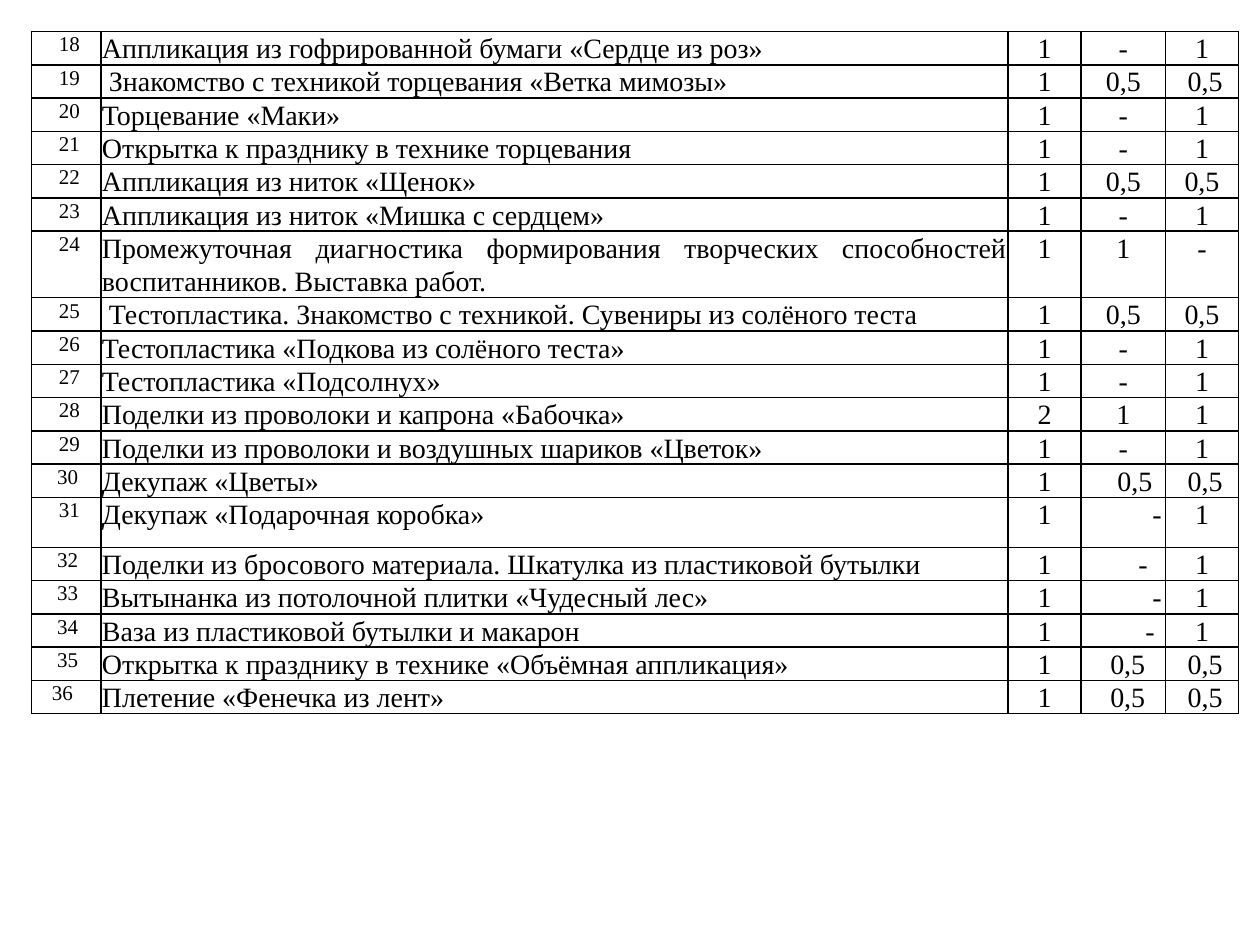
from dataclasses import dataclass

from lxml import etree
from pptx import Presentation
from pptx.dml.color import RGBColor
from pptx.enum.text import PP_ALIGN
from pptx.oxml.ns import qn
from pptx.util import Pt

LEFT, CENTER, JUSTIFY = PP_ALIGN.LEFT, PP_ALIGN.CENTER, PP_ALIGN.JUSTIFY


@dataclass(frozen=True)
class Theme:
    font: str = "Times New Roman"
    ink: str = "000000"
    number_size: float = 12
    text_size: float = 16
    line_spacing: float = 1.07
    border: float = 1
    inset: float = 0.7


# Lesson plan: topic, total hours, theory, practice
FIRST_NUMBER = 18
LESSONS = [
    ("Аппликация из гофрированной бумаги «Сердце из роз»", "1", "-", "1"),
    ("Знакомство с техникой торцевания «Ветка мимозы»", "1", "0,5", "0,5"),
    ("Торцевание «Маки»", "1", "-", "1"),
    ("Открытка к празднику в технике торцевания", "1", "-", "1"),
    ("Аппликация из ниток «Щенок»", "1", "0,5", "0,5"),
    ("Аппликация из ниток «Мишка с сердцем»", "1", "-", "1"),
    ("Промежуточная диагностика формирования творческих способностей "
     "воспитанников. Выставка работ.", "1", "1", "-"),
    ("Тестопластика. Знакомство с техникой. Сувениры из солёного теста",
     "1", "0,5", "0,5"),
    ("Тестопластика «Подкова из солёного теста»", "1", "-", "1"),
    ("Тестопластика «Подсолнух»", "1", "-", "1"),
    ("Поделки из проволоки и капрона «Бабочка»", "2", "1", "1"),
    ("Поделки из проволоки и воздушных шариков «Цветок»", "1", "-", "1"),
    ("Декупаж «Цветы»", "1", "0,5", "0,5"),
    ("Декупаж «Подарочная коробка»", "1", "-", "1"),
    ("Поделки из бросового материала. Шкатулка из пластиковой бутылки",
     "1", "-", "1"),
    ("Вытынанка из потолочной плитки «Чудесный лес»", "1", "-", "1"),
    ("Ваза из пластиковой бутылки и макарон", "1", "-", "1"),
    ("Открытка к празднику в технике «Объёмная аппликация»",
     "1", "0,5", "0,5"),
    ("Плетение «Фенечка из лент»", "1", "0,5", "0,5"),
]

# Layout in points
COLUMN_WIDTHS = [39.6, 518.4, 41.8, 48.2, 41.8]
ROW_HEIGHT = 19
TALL_ROWS = {24: 38, 31: 28.5}
FIRST_LEFT_TOPIC = 29  # topics from here on are set flush left

# Left indents by lesson number; hours listed here are not centred
NUMBER_INDENTS = {30: 14, 32: 14, 33: 14, 34: 14, 35: 14, 36: 11}
TOPIC_INDENTS = {19: 4, 25: 4}
THEORY_INDENTS = {30: 20, 31: 40, 32: 32, 33: 40, 34: 36, 35: 16, 36: 16}
PRACTICE_INDENTS = {19: 12, 30: 12, 35: 12, 36: 12}


class SlideBuilder:
    def __init__(self, deck, theme):
        self.theme = theme
        self.slide = deck.slides.add_slide(deck.slide_layouts[6])

    def table(self, left, top, widths, heights):
        frame = self.slide.shapes.add_table(
            len(heights), len(widths), Pt(left), Pt(top),
            Pt(sum(widths)), Pt(sum(heights)))
        table = frame.table
        table.first_row = table.horz_banding = False
        for column, width in zip(table.columns, widths):
            column.width = Pt(width)
        for row, height in zip(table.rows, heights):
            row.height = Pt(height)
        return table

    def cell(self, cell, text, size, align, indent=0):
        theme = self.theme
        cell.margin_left = cell.margin_right = Pt(theme.inset)
        cell.margin_top = cell.margin_bottom = 0
        self.borders(cell)
        cell.fill.background()

        para = cell.text_frame.paragraphs[0]
        para.alignment = align
        para.line_spacing = theme.line_spacing
        if indent:
            para._p.get_or_add_pPr().set("marL", str(Pt(indent)))
        span = para.add_run()
        span.text = text
        span.font.name = theme.font
        span.font.size = Pt(size)
        span.font.color.rgb = RGBColor.from_string(theme.ink)

    def borders(self, cell):
        properties = cell._tc.get_or_add_tcPr()
        for side in ("a:lnL", "a:lnR", "a:lnT", "a:lnB"):
            line = etree.SubElement(properties, qn(side),
                                    w=str(Pt(self.theme.border)))
            fill = etree.SubElement(line, qn("a:solidFill"))
            etree.SubElement(fill, qn("a:srgbClr"), val=self.theme.ink)

    def hours(self, cell, text, indent):
        align = LEFT if indent else CENTER
        self.cell(cell, text, self.theme.text_size, align, indent)


def main():
    deck = Presentation()
    deck.slide_width, deck.slide_height = Pt(720), Pt(540)
    theme = Theme()
    page = SlideBuilder(deck, theme)

    # Table grid
    numbers = range(FIRST_NUMBER, FIRST_NUMBER + len(LESSONS))
    heights = [TALL_ROWS.get(number, ROW_HEIGHT) for number in numbers]
    table = page.table(18, 18, COLUMN_WIDTHS, heights)

    # Lessons
    for row, (number, lesson) in enumerate(zip(numbers, LESSONS)):
        topic, total, theory, practice = lesson
        page.cell(table.cell(row, 0), str(number), theme.number_size,
                  JUSTIFY, NUMBER_INDENTS.get(number, 15))
        page.cell(table.cell(row, 1), topic, theme.text_size,
                  JUSTIFY if number < FIRST_LEFT_TOPIC else LEFT,
                  TOPIC_INDENTS.get(number, 0))
        page.hours(table.cell(row, 2), total, 0)
        page.hours(table.cell(row, 3), theory, THEORY_INDENTS.get(number, 0))
        page.hours(table.cell(row, 4), practice,
                   PRACTICE_INDENTS.get(number, 0))

    deck.save("out.pptx")


if __name__ == "__main__":
    main()
